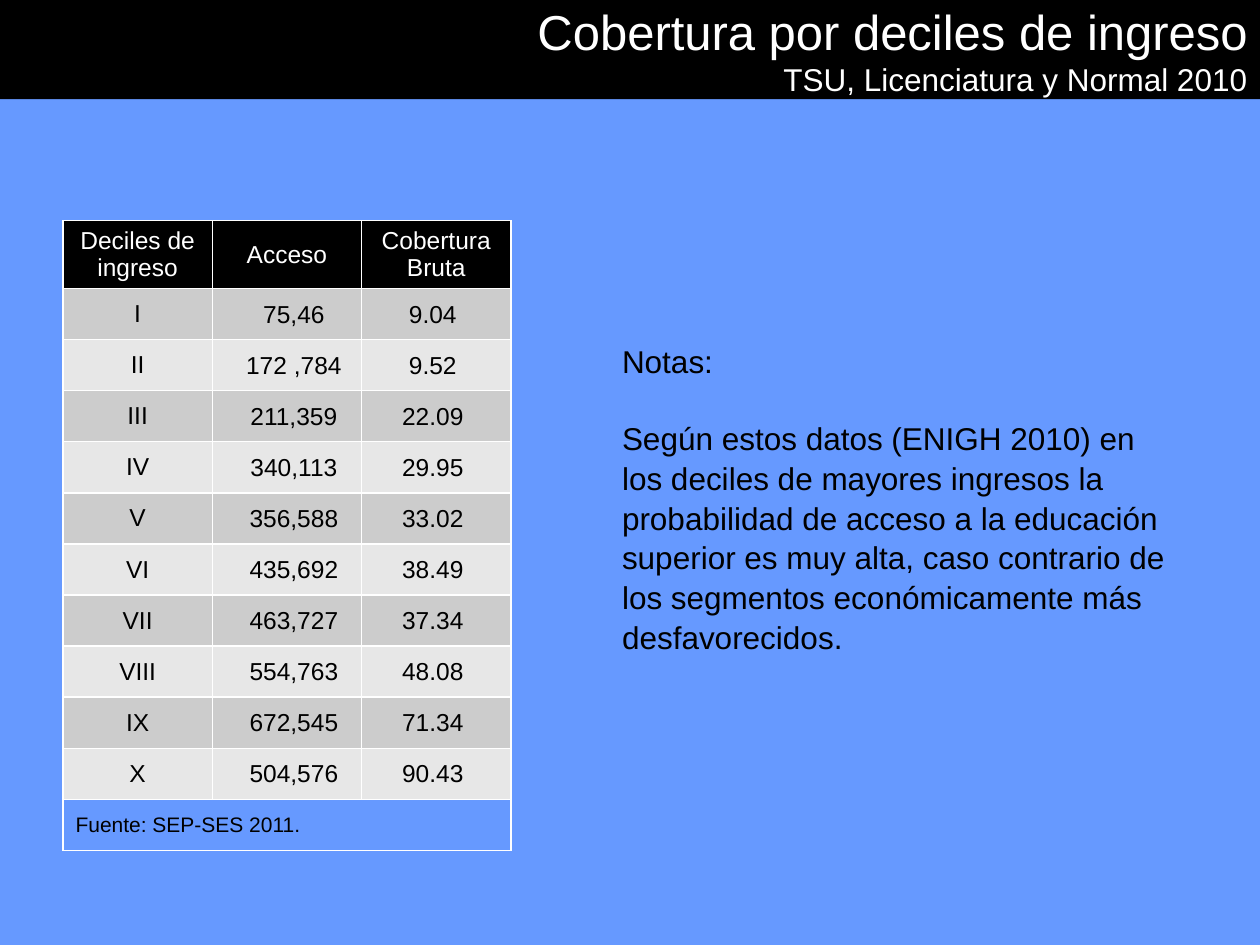
from typing import NamedTuple

from lxml import etree
from pptx import Presentation
from pptx.dml.color import RGBColor
from pptx.enum.text import MSO_ANCHOR, MSO_AUTO_SIZE, PP_ALIGN
from pptx.oxml.ns import qn
from pptx.util import Cm, Pt

LEFT, CENTER, RIGHT = PP_ALIGN.LEFT, PP_ALIGN.CENTER, PP_ALIGN.RIGHT
MIDDLE = MSO_ANCHOR.MIDDLE
NO_AUTOFIT = MSO_AUTO_SIZE.NONE

COLORS = {
    "background": "6699FF",
    "black": "000000",
    "white": "FFFFFF",
    "band_dark": "CCCCCC",
    "band_light": "E7E7E7",
}
FONT = "Arial"
COLUMN_WIDTH, HEADER_HEIGHT, ROW_HEIGHT = Cm(3.01), Cm(1.35), Cm(1.03)
BORDER_WIDTH = Pt(1)

HEADERS = ("Deciles de ingreso", "Acceso", "Cobertura\vBruta")
SOURCE = "Fuente: SEP-SES 2011."
NOTES = (
    "Notas:",
    "Según estos datos (ENIGH 2010) en los deciles de mayores ingresos la "
    "probabilidad de acceso a la educación superior es muy alta, caso contrario "
    "de los segmentos económicamente más desfavorecidos.",
)


class Decile(NamedTuple):
    name: str
    access: str
    coverage: str


DECILES = (
    Decile("I", "75,46", "9.04"),
    Decile("II", "172 ,784", "9.52"),
    Decile("III", "211,359", "22.09"),
    Decile("IV", "340,113", "29.95"),
    Decile("V", "356,588", "33.02"),
    Decile("VI", "435,692", "38.49"),
    Decile("VII", "463,727", "37.34"),
    Decile("VIII", "554,763", "48.08"),
    Decile("IX", "672,545", "71.34"),
    Decile("X", "504,576", "90.43"),
)

# Uneven side margins shift the centred figures within their columns
VALUE_MARGINS = {"margin_top": Cm(0.02), "margin_bottom": 0}
COLUMN_MARGINS = (
    {},
    {"margin_left": Cm(0.3), "margin_right": Cm(0.02), **VALUE_MARGINS},
    {"margin_left": Cm(0.02), "margin_right": Cm(0.16), **VALUE_MARGINS},
)


def rgb(name: str) -> RGBColor:
    return RGBColor.from_string(COLORS[name])


def apply(target, values: dict) -> None:
    for name, value in values.items():
        setattr(target, name, value)


def add_run(p, text: str, size: float, color: str) -> None:
    r = p.add_run()
    r.text = text
    apply(r.font, {"name": FONT, "size": Pt(size), "bold": False})
    r.font.color.rgb = rgb(color)


def add_borders(cell) -> None:
    tcPr = cell._tc.get_or_add_tcPr()
    for side in ("a:lnL", "a:lnR", "a:lnT", "a:lnB"):
        ln = etree.SubElement(tcPr, qn(side), w=str(BORDER_WIDTH))
        fill = etree.SubElement(ln, qn("a:solidFill"))
        etree.SubElement(fill, qn("a:srgbClr"), val=COLORS["white"])


def fill_cell(cell, text: str, fill: str | None, color: str = "black",
              size: float = 14, align=CENTER, margins: dict | None = None) -> None:
    add_borders(cell)
    if fill:
        cell.fill.solid()
        cell.fill.fore_color.rgb = rgb(fill)
    else:
        cell.fill.background()
    apply(cell, {"vertical_anchor": MIDDLE, **(margins or {})})
    p = cell.text_frame.paragraphs[0]
    p.alignment = align
    for i, line in enumerate(text.split("\v")):
        if i:
            p.add_line_break()
        add_run(p, line, size, color)


def add_title(s) -> None:
    title = s.shapes.title
    apply(title, {"left": 0, "top": 0, "width": Cm(25.4), "height": Cm(2)})
    title.fill.solid()
    title.fill.fore_color.rgb = rgb("black")
    tf = title.text_frame
    apply(tf, {"vertical_anchor": MIDDLE, "word_wrap": True, "auto_size": NO_AUTOFIT})
    p = tf.paragraphs[0]
    p.alignment = RIGHT
    add_run(p, "Cobertura por deciles de ingreso", 28, "white")
    p.add_line_break()
    add_run(p, "TSU, Licenciatura y Normal 2010", 18, "white")


def add_decile_table(s) -> None:
    row_count, column_count = len(DECILES) + 2, len(HEADERS)
    table = s.shapes.add_table(
        row_count, column_count, Cm(1.27), Cm(4.45), COLUMN_WIDTH * column_count,
        HEADER_HEIGHT + ROW_HEIGHT * (row_count - 1)).table
    apply(table, {"first_row": False, "horz_banding": False})
    for column in table.columns:
        column.width = COLUMN_WIDTH
    for i, row in enumerate(table.rows):
        row.height = ROW_HEIGHT if i else HEADER_HEIGHT

    for col, text in enumerate(HEADERS):
        fill_cell(table.cell(0, col), text, "black", "white")
    for row, decile in enumerate(DECILES, 1):
        band = "band_dark" if row % 2 else "band_light"
        for col, (text, margins) in enumerate(zip(decile, COLUMN_MARGINS)):
            fill_cell(table.cell(row, col), text, band, margins=margins)

    last = row_count - 1
    source = table.cell(last, 0)
    source.merge(table.cell(last, column_count - 1))
    fill_cell(source, SOURCE, None, size=12, align=LEFT)


def add_notes_text(s) -> None:
    tf = s.shapes.add_textbox(Cm(12.29), Cm(6.73), Cm(11.81), Cm(6.4)).text_frame
    tf.word_wrap = True
    for i, text in enumerate(NOTES):
        p = tf.add_paragraph() if i else tf.paragraphs[0]
        apply(p, {"line_spacing": 1.05, "space_before": Pt(21.6 if i else 0)})
        add_run(p, text, 18, "black")


def main() -> None:
    prs = Presentation()
    apply(prs, {"slide_width": Cm(25.4), "slide_height": Cm(19.05)})
    s = prs.slides.add_slide(prs.slide_layouts[5])
    s.background.fill.solid()
    s.background.fill.fore_color.rgb = rgb("background")
    add_title(s)
    add_decile_table(s)
    add_notes_text(s)
    prs.save("out.pptx")


if __name__ == "__main__":
    main()
